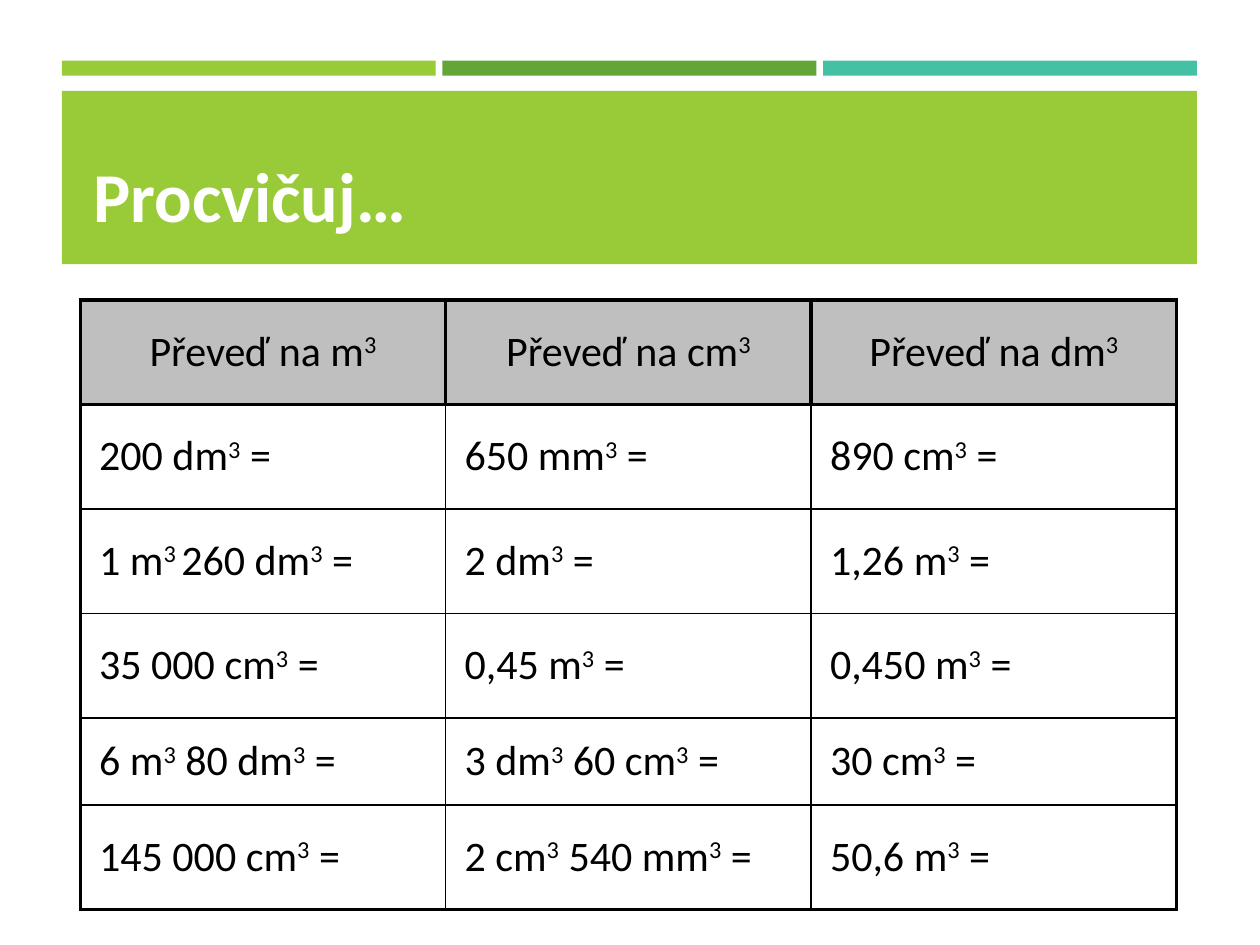
from typing import NamedTuple

from lxml import etree
from pptx import Presentation
from pptx.dml.color import RGBColor
from pptx.enum import shapes, text
from pptx.oxml import ns
from pptx.util import Pt

LIME = RGBColor(0x99, 0xCB, 0x38)
GREEN = RGBColor(0x63, 0xA5, 0x37)
TEAL = RGBColor(0x44, 0xC1, 0xA3)
GREY = RGBColor(0xBF, 0xBF, 0xBF)
BLACK = RGBColor(0, 0, 0)
WHITE = RGBColor(0xFF, 0xFF, 0xFF)

FONT = "Calibri"
LEFT, WIDTH, GAP = 35.3, 648.7, 3.8
BAR = (WIDTH - 2 * GAP) / 3
THICK, THIN = 2.25, 1

# A caret switches superscript on and off
ROWS = [
    ["Převeď na m^3", "Převeď na cm^3", "Převeď na dm^3"],
    ["200 dm^3^ =", "650 mm^3^ =", "890 cm^3^ ="],
    ["1 m^3 ^260 dm^3^ =", "2 dm^3^ =", "1,26 m^3^ ="],
    ["35 000 cm^3^ =", "0,45 m^3^ =", "0,450 m^3^ ="],
    ["6 m^3^ 80 dm^3^ =", "3 dm^3^ 60 cm^3^ =", "30 cm^3^ ="],
    ["145 000 cm^3^ =", "2 cm^3^ 540 mm^3^ =", "50,6 m^3^ ="],
]
HEIGHTS = [59.7, 59.7, 59.7, 59.7, 49.8, 59.7]
COL = 208.8


class Block(NamedTuple):
    left: float
    top: float
    width: float
    height: float
    color: RGBColor


def draw_block(slide, block: Block) -> None:
    rect = slide.shapes.add_shape(
        shapes.MSO_SHAPE.RECTANGLE, *(Pt(size) for size in block[:4]))
    rect.shadow.inherit = False
    rect.fill.solid()
    rect.fill.fore_color.rgb = block.color
    rect.line.fill.background()


def style(run, size: float, color: RGBColor, bold: bool = False) -> None:
    run.font.name = FONT
    run.font.size = Pt(size)
    run.font.bold = bold
    run.font.color.rgb = color


def set_edges(cell, widths: dict[str, float]) -> None:
    props = cell._tc.get_or_add_tcPr()
    for spot, (side, width) in enumerate(widths.items()):
        line = etree.Element(ns.qn(f"a:ln{side}"), w=str(Pt(width)))
        fill = etree.SubElement(line, ns.qn("a:solidFill"))
        etree.SubElement(fill, ns.qn("a:srgbClr"), val=str(BLACK))
        props.insert(spot, line)


def fill_cell(cell, words: str, head: bool) -> None:
    cell.margin_left = cell.margin_right = Pt(3.6)
    cell.margin_top = cell.margin_bottom = 0
    cell.vertical_anchor = text.MSO_ANCHOR.MIDDLE
    if head:
        cell.fill.solid()
        cell.fill.fore_color.rgb = GREY
    else:
        cell.fill.background()
    para = cell.text_frame.paragraphs[0]
    if head:
        para.alignment = text.PP_ALIGN.CENTER
    else:
        props = para._p.get_or_add_pPr()
        props.set("marL", str(Pt(7.2)))
        props.set("indent", "0")
    for spot, part in enumerate(words.split("^")):
        run = para.add_run()
        run.text = part
        style(run, 24, BLACK)
        if spot % 2:
            run.font._element.set("baseline", "30000")


def draw_table(slide) -> None:
    last_row, last_col = len(ROWS) - 1, len(ROWS[0]) - 1
    table = slide.shapes.add_table(
        len(ROWS), len(ROWS[0]), Pt(45.9), Pt(171.4),
        Pt(COL * len(ROWS[0])), Pt(sum(HEIGHTS))).table
    table.first_row = table.horz_banding = False
    for col in table.columns:
        col.width = Pt(COL)
    for r, (row, height) in enumerate(zip(ROWS, HEIGHTS)):
        table.rows[r].height = Pt(height)
        for c, words in enumerate(row):
            head = r == 0
            cell = table.cell(r, c)
            fill_cell(cell, words, head)
            # Heavy lines run round the header cells and the outer frame
            heavy = {"L": head or c == 0, "R": head or c == last_col,
                     "T": r <= 1, "B": head or r == last_row}
            set_edges(cell, {side: THICK if on else THIN
                             for side, on in heavy.items()})


def draw_title(slide) -> None:
    title = slide.shapes.title
    title.left, title.top = Pt(46.1), Pt(54)
    title.width, title.height = Pt(629.3), Pt(85)
    frame = title.text_frame
    frame.text = "Procvičuj…"
    frame.vertical_anchor = text.MSO_ANCHOR.BOTTOM
    para = frame.paragraphs[0]
    para.alignment = text.PP_ALIGN.LEFT
    style(para.runs[0], 40, WHITE, bold=True)
    # Bring the title in front of the band
    slide.shapes._spTree.append(title._element)


def main() -> None:
    deck = Presentation()
    deck.slide_width, deck.slide_height = Pt(720), Pt(540)
    slide = deck.slides.add_slide(deck.slide_layouts[5])

    # Three bars above the title band
    for i, color in enumerate((LIME, GREEN, TEAL)):
        draw_block(slide, Block(LEFT + i * (BAR + GAP), 34.7, BAR, 8.5, color))
    draw_block(slide, Block(LEFT, 52, WIDTH, 99, LIME))

    draw_title(slide)
    draw_table(slide)
    deck.save("out.pptx")


if __name__ == "__main__":
    main()
